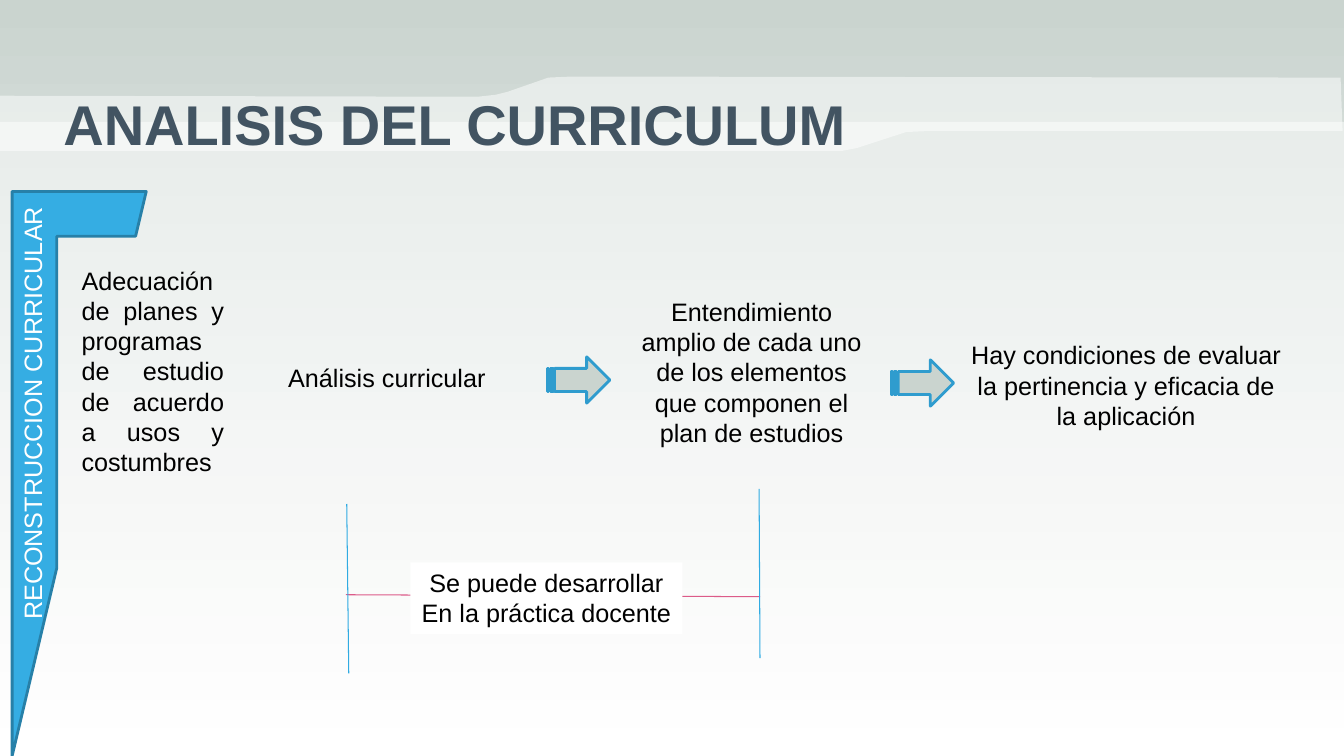
"""Build the slide on curriculum analysis."""
from dataclasses import dataclass

from lxml import etree
from pptx import Presentation
from pptx.dml.color import RGBColor
from pptx.enum.shapes import MSO_CONNECTOR, MSO_SHAPE
from pptx.enum.text import MSO_ANCHOR, MSO_AUTO_SIZE, PP_ALIGN
from pptx.oxml.ns import qn
from pptx.util import Inches, Pt

STRAIGHT = MSO_CONNECTOR.STRAIGHT
HALF_FRAME, ARROW = MSO_SHAPE.HALF_FRAME, MSO_SHAPE.STRIPED_RIGHT_ARROW
LEFT, CENTER, JUSTIFY = PP_ALIGN.LEFT, PP_ALIGN.CENTER, PP_ALIGN.JUSTIFY
TOP, MIDDLE = MSO_ANCHOR.TOP, MSO_ANCHOR.MIDDLE
GROW, FIXED = MSO_AUTO_SIZE.SHAPE_TO_FIT_TEXT, MSO_AUTO_SIZE.NONE

WIDTH, HEIGHT = Inches(13.33), Inches(7.5)
COLS = ROWS = 100
Point = tuple[float, float]


@dataclass(frozen=True)
class Theme:
    font: str = "Arial"
    title_size: float = 40
    body_size: float = 18
    hairline: float = 0.75
    outline: float = 2
    band_alpha: int = 50
    white: str = "FFFFFF"
    black: str = "000000"
    mist: str = "CAD4CF"
    slate: str = "425462"
    blue: str = "35ADE3"
    frame_edge: str = "2780A8"
    arrow_edge: str = "2F9CCE"
    bracket: str = "30ABE2"
    pink: str = "DC5B89"


THEME = Theme()


@dataclass(frozen=True)
class Box:
    x: float
    y: float
    w: float
    h: float

    def emu(self) -> tuple[int, int, int, int]:
        return col(self.x), row(self.y), col(self.w), row(self.h)


@dataclass(frozen=True)
class Label:
    box: Box
    lines: tuple[str, ...]
    align: PP_ALIGN = CENTER
    wrap: bool = True
    color: str = THEME.black
    size: float = THEME.body_size
    bold: bool = False
    anchor: MSO_ANCHOR = TOP
    fit: MSO_AUTO_SIZE = GROW
    rotation: float = 0
    fill: str = ""


@dataclass(frozen=True)
class Figure:
    kind: MSO_SHAPE
    box: Box
    fill: str
    edge: str


@dataclass(frozen=True)
class Rule:
    start: Point
    end: Point
    color: str


BANDS: list[list[Point]] = [
    [(0, 16.13), (100, 16.13), (100, 100), (0, 100)],
    [(99.75, 10.27), (42.5, 10.13), (40.8, 10.27), (37.8, 12.13), (36.9, 12.53),
     (35.55, 12.8), (0, 12.67), (0, 20), (62.55, 20), (63.75, 19.6),
     (67.43, 17.47), (69.23, 17.33), (99.9, 17.33)],
]
RULES = [
    Rule((25.73, 78.67), (56.55, 78.93), THEME.pink),
    Rule((25.8, 66.67), (25.95, 89.07), THEME.bracket),
    Rule((56.48, 64.67), (56.55, 87.07), THEME.bracket),
]
FIGURES = [
    Figure(HALF_FRAME, Box(0.9, 25.33, 9.98, 74.67), THEME.blue, THEME.frame_edge),
    *(Figure(ARROW, Box(x, y, 4.65, 6.13), THEME.mist, THEME.arrow_edge)
      for x, y in ((40.73, 47.2), (66.3, 47.6))),
]
LABELS = [
    Label(Box(3.98, 11.33, 91.88, 9.87), ("ANALISIS DEL CURRICULUM",), LEFT,
          color=THEME.slate, size=THEME.title_size, bold=True, anchor=MIDDLE, fit=FIXED),
    Label(Box(5.33, 34.4, 12.08, 29.6),
          ("Adecuación de planes y programas de estudio de acuerdo a usos y costumbres",),
          JUSTIFY),
    Label(Box(20.7, 47.33, 16.35, 5.33), ("Análisis curricular",), LEFT, wrap=False),
    Label(Box(30.53, 74.4, 20.25, 9.47),
          ("Se puede desarrollar", "En la práctica docente"), wrap=False, fill=THEME.white),
    Label(Box(46.88, 38.53, 18.08, 21.6),
          ("Entendimiento amplio de cada uno de los elementos",
           "que componen el plan de estudios")),
    Label(Box(71.33, 44.27, 24.9, 13.47),
          ("Hay condiciones de evaluar la pertinencia y eficacia de la aplicación",)),
    Label(Box(-13.88, 51.73, 32.55, 5.33), ("RECONSTRUCCION CURRICULAR",), LEFT,
          wrap=False, color=THEME.white, rotation=270),
]


def col(n: float) -> int:
    return round(WIDTH * n / COLS)


def row(n: float) -> int:
    return round(HEIGHT * n / ROWS)


def rgb(color: str) -> RGBColor:
    return RGBColor.from_string(color)


def apply(target, values: dict) -> None:
    for name, value in values.items():
        setattr(target, name, value)


def paint(sp, color: str) -> None:
    sp.fill.solid()
    sp.fill.fore_color.rgb = rgb(color)


def draw_background(s) -> None:
    fill = s.background.fill
    fill.gradient()
    fill.gradient_angle = 270
    for stop, color in zip(fill.gradient_stops, (THEME.mist, THEME.white)):
        stop.color.rgb = rgb(color)


def draw_band(s, points: list[Point]) -> None:
    corners = [(col(x), row(y)) for x, y in points]
    builder = s.shapes.build_freeform(*corners[0])
    builder.add_line_segments(corners[1:], close=True)
    sp = builder.convert_to_shape()
    sp.shadow.inherit = False
    sp.line.fill.background()
    paint(sp, THEME.white)
    tint = next(sp.element.spPr.iter(qn("a:srgbClr")))
    etree.SubElement(tint, qn("a:alpha"), val=str(THEME.band_alpha * 1000))


def draw_rule(s, rule: Rule) -> None:
    (x1, y1), (x2, y2) = rule.start, rule.end
    sp = s.shapes.add_connector(STRAIGHT, col(x1), row(y1), col(x2), row(y2))
    sp.line.color.rgb = rgb(rule.color)
    sp.line.width = Pt(THEME.hairline)
    etree.SubElement(sp.element.spPr, qn("a:effectLst"))


def draw_figure(s, figure: Figure) -> None:
    sp = s.shapes.add_shape(figure.kind, *figure.box.emu())
    sp.shadow.inherit = False
    paint(sp, figure.fill)
    sp.line.color.rgb = rgb(figure.edge)
    sp.line.width = Pt(THEME.outline)


def draw_label(s, label: Label) -> None:
    sp = s.shapes.add_textbox(*label.box.emu())
    sp.rotation = label.rotation
    if label.fill:
        paint(sp, label.fill)
    tf = sp.text_frame
    apply(tf, {"word_wrap": label.wrap, "auto_size": label.fit,
               "vertical_anchor": label.anchor})
    for i, line in enumerate(label.lines):
        p = tf.add_paragraph() if i else tf.paragraphs[0]
        p.alignment = label.align
        r = p.add_run()
        r.text = line
        apply(r.font, {"name": THEME.font, "size": Pt(label.size), "bold": label.bold})
        r.font.color.rgb = rgb(label.color)


def main() -> None:
    prs = Presentation()
    apply(prs, {"slide_width": WIDTH, "slide_height": HEIGHT})
    s = prs.slides.add_slide(prs.slide_layouts[6])
    draw_background(s)
    for draw, items in ((draw_band, BANDS), (draw_rule, RULES),
                        (draw_figure, FIGURES), (draw_label, LABELS)):
        for item in items:
            draw(s, item)
    prs.save("out.pptx")


if __name__ == "__main__":
    main()
